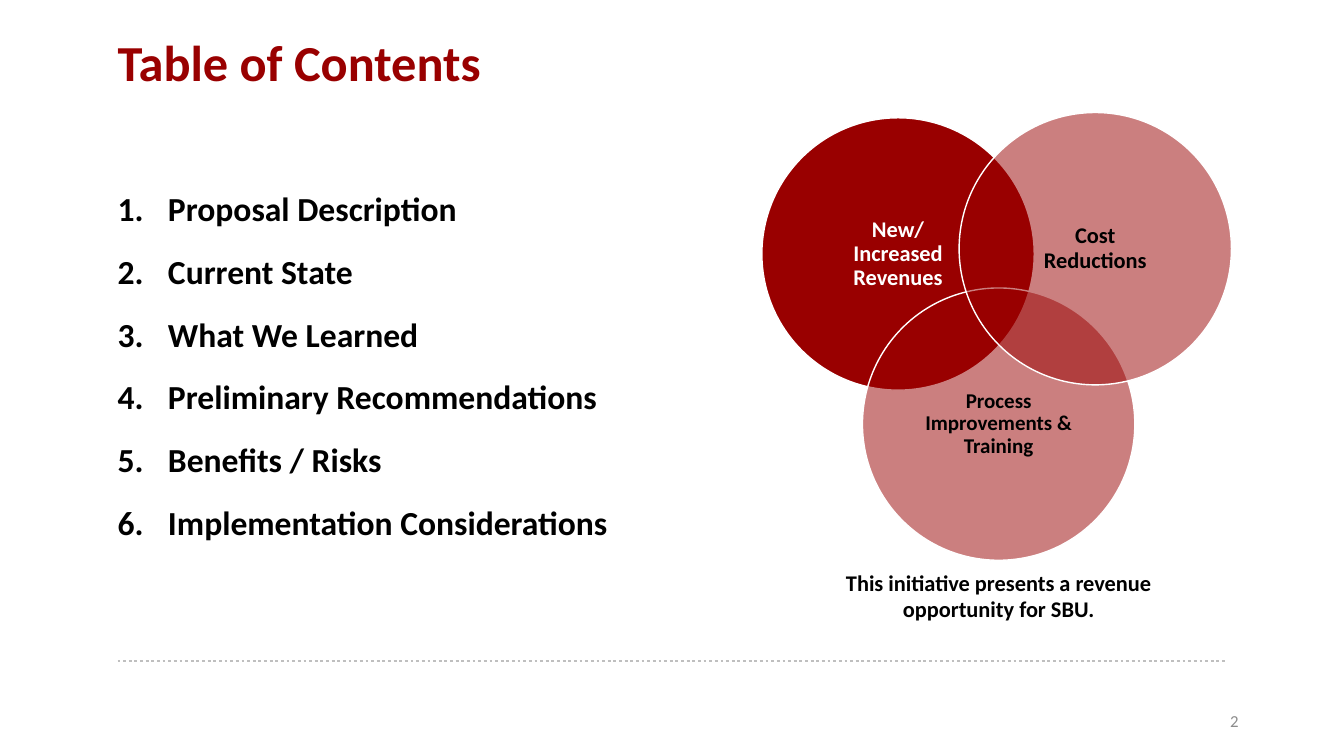
from lxml import etree
from pptx import Presentation, util as u
from pptx.dml.color import RGBColor
from pptx.enum import dml, shapes, text
from pptx.oxml.ns import qn

COLORS = {"red": "990000", "black": "000000", "white": "FFFFFF", "rule": "BFBFBF", "number": "8C8C8C"}
COLUMNS, ROWS = 160, 90
CELL = u.Inches(7.5) / ROWS
TOPICS = ["Proposal Description", "Current State", "What We Learned",
          "Preliminary Recommendations", "Benefits / Risks", "Implementation Considerations"]
LEVERS = [
    (0, 0.03, ["New/", "Increased Revenues"], "white", 16, 100),
    (0.51, 1, ["Process Improvements & Training"], "black", 15, 50),
    (1, 0, ["Cost", "Reductions"], "black", 16, 50),
]


def grid(*cells):
    """Convert grid cells to slide lengths."""
    return [u.Emu(round(cell * CELL)) for cell in cells]


def color(name):
    """Look up a named colour."""
    return RGBColor.from_string(COLORS[name])


def write(frame, lines, size, ink, align, bold=True, anchor=text.MSO_ANCHOR.TOP, inset=0, spacing=None):
    """Fill a text frame with evenly formatted paragraphs."""
    frame.text = "\n".join(lines)
    frame.word_wrap = True
    frame.auto_size = text.MSO_AUTO_SIZE.NONE
    frame.vertical_anchor = anchor
    frame.margin_left = frame.margin_right = frame.margin_top = frame.margin_bottom = u.Inches(inset)
    for paragraph in frame.paragraphs:
        paragraph.alignment = align
        paragraph.line_spacing = spacing
        paragraph.space_before = u.Pt(0)
        for run in paragraph.runs:
            run.font.name, run.font.size, run.font.bold = "Calibri", u.Pt(size), bold
            run.font.color.rgb = color(ink)


def place(shape, box):
    """Move a placeholder into a grid box."""
    shape.left, shape.top, shape.width, shape.height = grid(*box)


def add_title(slide, box):
    """Write the slide title."""
    title = slide.shapes.title
    place(title, box)
    write(title.text_frame, ["Table of Contents"], 36, "red", text.PP_ALIGN.LEFT,
          anchor=text.MSO_ANCHOR.MIDDLE)


def add_contents(slide, box):
    """Write the numbered list of topics."""
    contents = slide.placeholders[1]
    place(contents, box)
    write(contents.text_frame, TOPICS, 24, "black", text.PP_ALIGN.LEFT, spacing=1.14)
    for index, topic in enumerate(contents.text_frame.paragraphs):
        topic.space_before = u.Pt(6 if index else 0)
        topic.space_after = u.Pt(6)
        properties = topic._p.get_or_add_pPr()
        properties.set("marL", str(u.Inches(0.5)))
        properties.set("indent", str(-u.Inches(0.5)))
        etree.SubElement(properties, qn("a:buFont"), typeface="+mj-lt")
        etree.SubElement(properties, qn("a:buAutoNum"), type="arabicPeriod")


def add_venn(slide, box):
    """Draw three overlapping circles inside a box."""
    left, top, width, height = box
    diameter = 0.58 * width
    for across, down, lines, ink, size, opacity in LEVERS:
        circle = slide.shapes.add_shape(shapes.MSO_SHAPE.OVAL, *grid(
            left + across * (width - diameter), top + down * (height - diameter), diameter, diameter))
        circle.shadow.inherit = False
        circle.fill.solid()
        circle.fill.fore_color.rgb = color("red")
        if opacity < 100:
            tint = circle.fill._xPr.find(qn("a:solidFill"))[0]
            etree.SubElement(tint, qn("a:alpha"), val=str(opacity * 1000))
        circle.line.color.rgb = color("white")
        circle.line.width = u.Pt(1)
        write(circle.text_frame, lines, size, ink, text.PP_ALIGN.CENTER,
              anchor=text.MSO_ANCHOR.MIDDLE, inset=0.07, spacing=0.9)


def add_caption(slide, box):
    """Write the statement below the circles."""
    caption = slide.shapes.add_textbox(*grid(*box))
    write(caption.text_frame, ["This initiative presents a revenue opportunity for SBU."],
          16, "black", text.PP_ALIGN.CENTER)


def add_footer(slide, box):
    """Draw the dotted rule and the page number below it."""
    left, top, width, height = box
    rule = slide.shapes.add_connector(shapes.MSO_CONNECTOR.STRAIGHT, *grid(left, top, left + width, top))
    rule.line.color.rgb = color("rule")
    rule.line.width = u.Pt(2)
    rule.line.dash_style = dml.MSO_LINE.ROUND_DOT
    etree.SubElement(rule._element.spPr, qn("a:effectLst"))
    number = slide.shapes.add_textbox(*grid(left + 0.75 * width, top + height - 4.8, 0.27 * width, 4.8))
    write(number.text_frame, ["2"], 12, "number", text.PP_ALIGN.RIGHT, bold=False,
          anchor=text.MSO_ANCHOR.MIDDLE, inset=0.1)


def main():
    """Build the contents slide."""
    deck = Presentation()
    deck.slide_width, deck.slide_height = grid(COLUMNS, ROWS)
    slide = deck.slides.add_slide(deck.slide_layouts[1])
    add_footer(slide, (14, 78.7, 132, 9.5))
    add_title(slide, (14, 3.6, 132, 7.3))
    add_contents(slide, (14, 21.7, 132, 66.5))
    add_venn(slide, (90.7, 13.4, 55.9, 53.3))
    add_caption(slide, (95.4, 67.7, 47, 6.5))
    deck.save("out.pptx")


if __name__ == "__main__":
    main()
